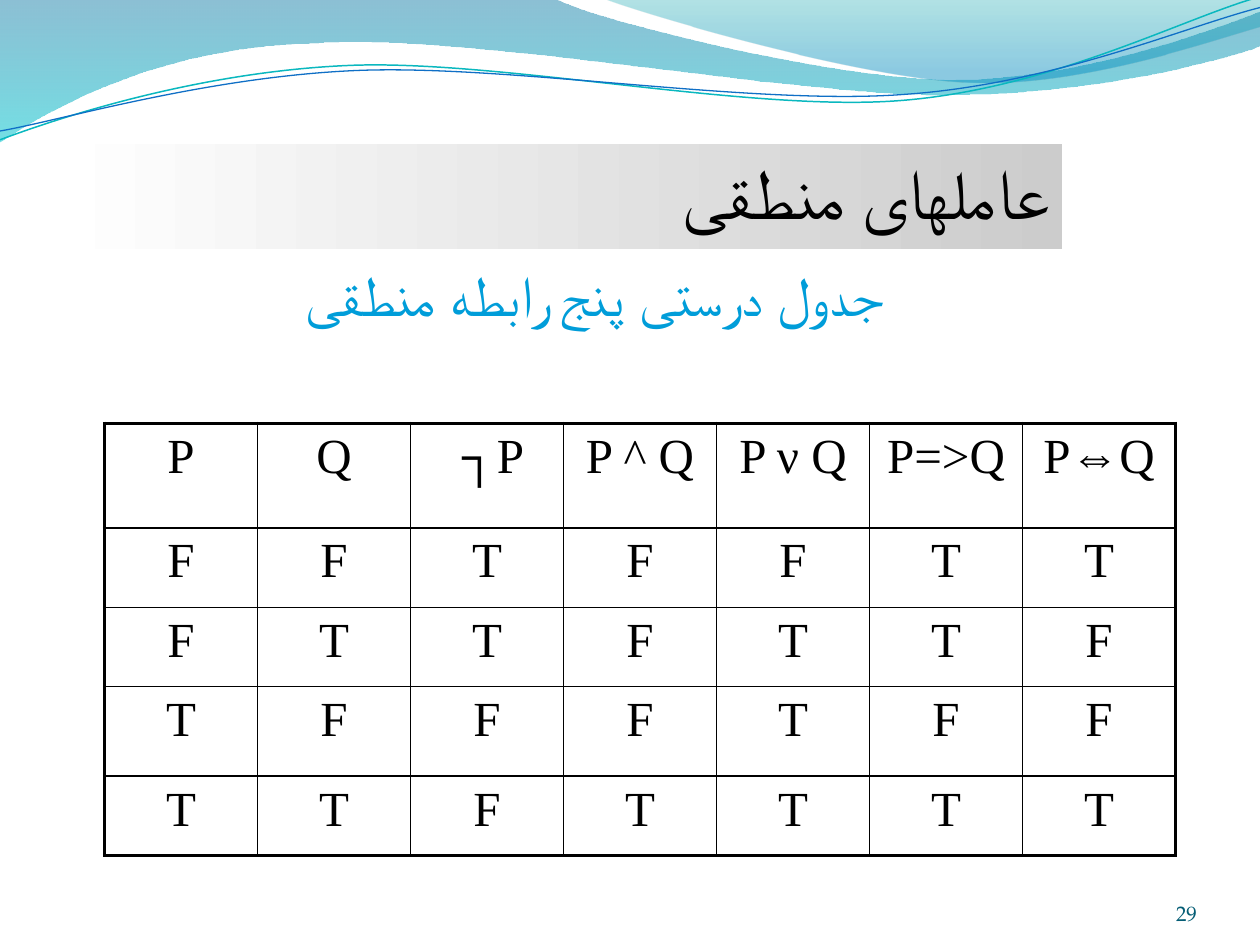
from lxml import etree
from pptx import Presentation
from pptx.dml.color import RGBColor
from pptx.enum.text import MSO_ANCHOR as Anchor, MSO_AUTO_SIZE as AutoSize, PP_ALIGN as Align
from pptx.oxml import parse_xml
from pptx.oxml.ns import qn
from pptx.util import Inches, Pt

A_NS = "http://schemas.openxmlformats.org/drawingml/2006/main"


def rgb(color):
    return RGBColor.from_string(color)


class SlideBuilder:
    serif, sans, number_font = "Times New Roman", "Arial", "TeX Gyre Pagella"
    ink, accent, number_color = "000000", "009DD9", "045D75"
    thin, thick = 1, 2.25

    def __init__(self, slide):
        self.slide = slide

    def format_text(self, tf, text, size, font, color, align, anchor=Anchor.TOP):
        tf.text = text
        tf.word_wrap = True
        tf.vertical_anchor = anchor
        p = tf.paragraphs[0]
        p.alignment = align
        for r in p.runs:
            r.font.size, r.font.name = Pt(size), font
            r.font.color.rgb = rgb(color)
            # Persian text takes the complex-script font
            etree.SubElement(r.font._element, qn("a:cs")).set("typeface", font)
        return p

    def gradient(self, sp, stops, angle):
        """Stops are (position, colour, opacity in percent)."""
        sp.fill.gradient()
        sp.fill.gradient_angle = angle
        for stop, (position, color, _) in zip(sp.fill.gradient_stops, stops):
            stop.position = position
            stop.color.rgb = rgb(color)
        for clr, (_, _, opacity) in zip(sp._element.spPr.iter(qn("a:srgbClr")), stops):
            if opacity < 100:
                etree.SubElement(clr, qn("a:alpha")).set("val", str(opacity * 1000))

    def freeform(self, start, segments, close):
        """Each segment is (x, y) for a line or six numbers for a cubic curve."""
        points = [(Inches(seg[i]), Inches(seg[i + 1]))
                  for seg in segments for i in range(0, len(seg), 2)]
        builder = self.slide.shapes.build_freeform(*map(Inches, start), scale=1.0)
        builder.add_line_segments(points, close=close)
        sp = builder.convert_to_shape()
        sp.shadow.inherit = False
        # Join the three points of each curve into one curve command
        steps = iter(list(sp._element.iter(qn("a:lnTo"))))
        for seg in segments:
            command = next(steps)
            if len(seg) == 6:
                command.tag = qn("a:cubicBezTo")
                for _ in range(2):
                    extra = next(steps)
                    command.append(extra[0])
                    extra.getparent().remove(extra)
        return sp

    def wave(self, start, segments, stops):
        sp = self.freeform(start, segments, True)
        self.gradient(sp, stops, 270)
        sp.line.fill.background()

    def curve(self, start, segments, color, width):
        sp = self.freeform(start, segments, False)
        sp.fill.background()
        sp.line.color.rgb = rgb(color)
        sp.line.width = Pt(width)

    def title(self, text, x, y, w, h):
        sp = self.slide.shapes.title
        sp.left, sp.top, sp.width, sp.height = map(Inches, (x, y, w, h))
        self.gradient(sp, [(0, "FFFFFF", 100), (1, "CCCCCC", 100)], 0)
        self.format_text(sp.text_frame, text, 40, self.serif, self.ink, Align.RIGHT)
        sp.text_frame.auto_size = AutoSize.SHAPE_TO_FIT_TEXT

    def subtitle(self, text, x, y, w, h):
        sp = self.slide.shapes.add_textbox(*map(Inches, (x, y, w, h)))
        p = self.format_text(sp.text_frame, text, 32, self.sans, self.accent, Align.CENTER)
        p._p.get_or_add_pPr().set("rtl", "1")
        sp.text_frame.auto_size = AutoSize.SHAPE_TO_FIT_TEXT

    def page_number(self, text, x, y, w, h):
        sp = self.slide.shapes.add_textbox(*map(Inches, (x, y, w, h)))
        tf = sp.text_frame
        tf.margin_left = tf.margin_top = tf.margin_right = tf.margin_bottom = 0
        self.format_text(tf, text, 12, self.number_font, self.number_color,
                         Align.RIGHT, Anchor.BOTTOM)

    def borders(self, cell, outer_sides):
        tcPr = cell._tc.get_or_add_tcPr()
        for i, side in enumerate("LRTB"):
            width = Pt(self.thick if side in outer_sides else self.thin)
            tcPr.insert(i, parse_xml(
                f'<a:ln{side} xmlns:a="{A_NS}" w="{width}"><a:solidFill>'
                f'<a:srgbClr val="{self.ink}"/></a:solidFill>'
                f'<a:prstDash val="solid"/></a:ln{side}>'))

    def table(self, rows, heights, x, y, w):
        n_rows, n_cols = len(rows), len(rows[0])
        frame = self.slide.shapes.add_table(n_rows, n_cols, Inches(x), Inches(y),
                                            Inches(w), Inches(sum(heights)))
        table = frame.table
        table.first_row = table.horz_banding = False
        for col in table.columns:
            col.width = Inches(w / n_cols)
        for i, (row, height) in enumerate(zip(rows, heights)):
            table.rows[i].height = Inches(height)
            for j, text in enumerate(row):
                cell = table.cell(i, j)
                cell.fill.background()
                self.format_text(cell.text_frame, text, 28, self.serif, self.ink, Align.CENTER)
                edges = {"L": j == 0, "R": j == n_cols - 1, "T": i == 0, "B": i == n_rows - 1}
                self.borders(cell, [side for side, outer in edges.items() if outer])


def main():
    prs = Presentation()
    prs.slide_width, prs.slide_height = Inches(10), Inches(7.5)
    s = SlideBuilder(prs.slides.add_slide(prs.slide_layouts[5]))

    # Waves along the top
    s.wave((0, 0), [(4.4, -0.01), (4.76, 0.17, 6.64, 0.63, 7.58, 0.63),
                    (8.53, 0.63, 9.58, 0.26, 10, 0.09), (10.01, 0.36),
                    (9.83, 0.44, 8.7, 0.76, 7.46, 0.75),
                    (6.22, 0.75, 3.82, 0.28, 2.57, 0.34),
                    (1.29, 0.36, 0.46, 0.83, -0.01, 1.13), (0, 0)],
           [(0, "0074A1", 45), (1, "00C6CF", 55)])
    s.wave((4.79, -0.01), [(5.09, 0.11, 6.82, 0.62, 7.69, 0.65),
                           (8.56, 0.69, 9.61, 0.32, 10, 0.21), (10, 0), (4.79, -0.01)],
           [(0, "00A1A9", 30), (0.8, "008BBF", 45)])
    s.curve((0, 1.11), [(0.48, 0.93, 1.58, 0.57, 2.77, 0.52),
                        (3.95, 0.47, 5.93, 0.89, 7.13, 0.8),
                        (8.33, 0.71, 9.38, 0.15, 9.98, -0.02)], "0AB8BF", 0.85)
    s.curve((0, 1.04), [(0.47, 0.96, 1.64, 0.61, 2.83, 0.56),
                        (4.03, 0.51, 5.97, 0.84, 7.17, 0.75),
                        (8.36, 0.67, 9.41, 0.21, 10, 0.06)], "0F6FC6", 0.75)

    # Headings and page number
    s.title("عاملهای منطقی", 0.43, 1.14, 8, 0.77)
    s.subtitle("جدول درستی پنج رابطه منطقی", 0.27, 2.02, 8.9, 0.63)
    s.page_number("29", 8.67, 6.95, 0.83, 0.4)

    # Truth table
    header = ["P", "Q", " ┐P", "P ^ Q", "P ν Q", "P=>Q", "P⇔Q"]
    values = ["FFTFFTT", "FTTFTTF", "TFFFTFF", "TTFTTTT"]
    s.table([header, *values], [0.83, 0.63, 0.63, 0.71, 0.63], 0.83, 3.36, 8.5)

    prs.save("out.pptx")


if __name__ == "__main__":
    main()
